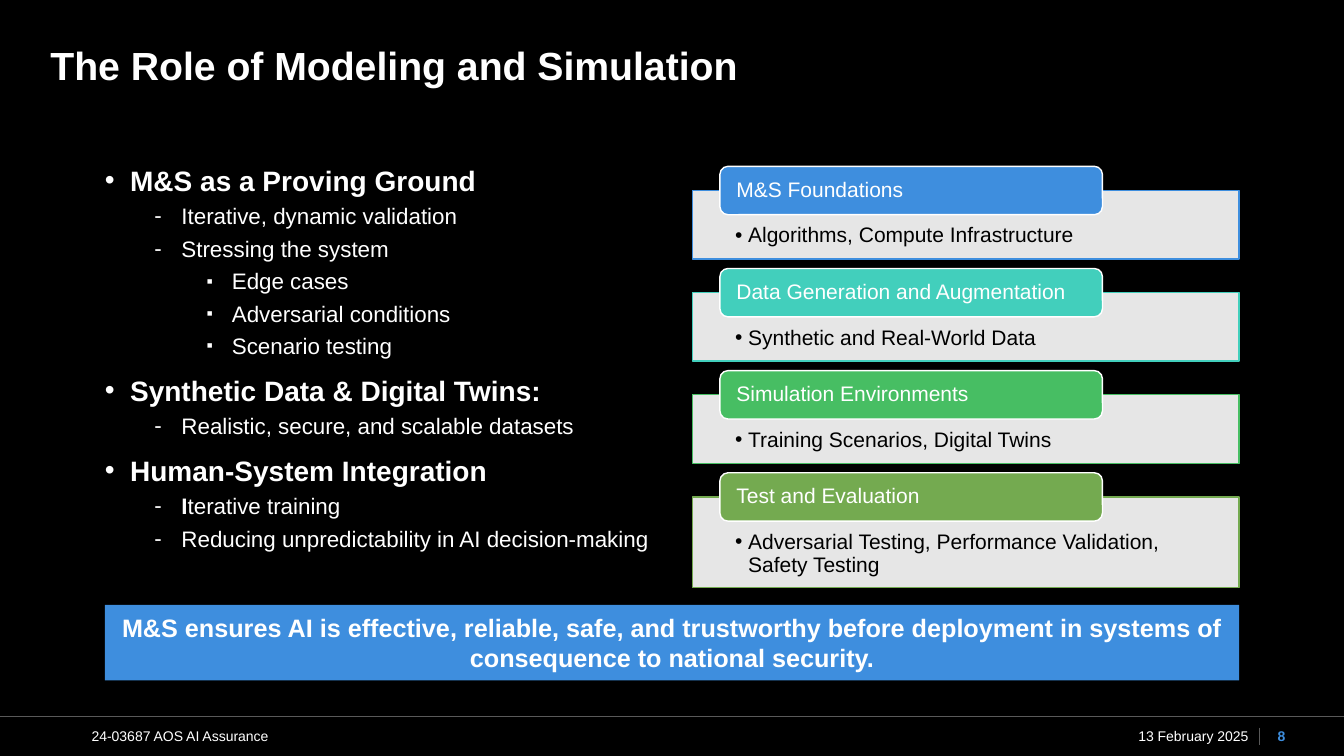
from dataclasses import dataclass

from lxml import etree
from pptx import Presentation
from pptx.dml.color import RGBColor
from pptx.enum.shapes import MSO_CONNECTOR, MSO_SHAPE
from pptx.enum.text import MSO_ANCHOR, PP_ALIGN
from pptx.oxml.ns import qn
from pptx.util import Inches, Pt

RECT, ROUNDED = MSO_SHAPE.RECTANGLE, MSO_SHAPE.ROUNDED_RECTANGLE
STRAIGHT = MSO_CONNECTOR.STRAIGHT
TOP, MIDDLE = MSO_ANCHOR.TOP, MSO_ANCHOR.MIDDLE
LEFT, CENTER, RIGHT = PP_ALIGN.LEFT, PP_ALIGN.CENTER, PP_ALIGN.RIGHT


@dataclass(frozen=True)
class Theme:
    font: str = "Arial"
    black: str = "000000"
    white: str = "FFFFFF"
    rule: str = "595959"
    blue: str = "3E8EDE"
    teal: str = "42CFBC"
    green: str = "47BE63"
    olive: str = "74AA50"
    title: int = 28
    heading: int = 20
    banner: int = 18
    item: int = 16
    panel: int = 15
    footer: int = 10


T = Theme()

# Outline level: bullet, bullet size %, indent, hanging, space before, size
LEVELS = [
    ("•", 100, 0.25, 0.25, 10, T.heading),
    ("-", 100, 0.76, 0.27, 4, T.item),
    ("▪", 80, 1.26, 0.25, 4, T.item),
]
# Outline line: level, bold text, regular text
OUTLINE = [
    (0, "M&S as a Proving Ground", ""),
    (1, "", "Iterative, dynamic validation"),
    (1, "", "Stressing the system"),
    (2, "", "Edge cases"),
    (2, "", "Adversarial conditions"),
    (2, "", "Scenario testing"),
    (0, "Synthetic Data & Digital Twins:", ""),
    (1, "", "Realistic, secure, and scalable datasets"),
    (0, "Human-System Integration", ""),
    (1, "I", "terative training"),
    (1, "", "Reducing unpredictability in AI decision-making"),
]
# Panel: label, detail, colour, height
PANELS = [
    ("M&S Foundations", "Algorithms, Compute Infrastructure", T.blue, 0.68),
    ("Data Generation and Augmentation", "Synthetic and Real-World Data", T.teal, 0.68),
    ("Simulation Environments", "Training Scenarios, Digital Twins", T.green, 0.68),
    ("Test and Evaluation",
     "Adversarial Testing, Performance Validation, Safety Testing", T.olive, 0.9),
]


def rgb(value):
    return RGBColor.from_string(value)


def add_run(p, text, size, color=T.white, bold=False):
    r = p.add_run()
    r.text = text
    r.font.name, r.font.size, r.font.bold = T.font, Pt(size), bold
    r.font.color.rgb = rgb(color)


def add_bullet(p, char, indent, hanging, percent=100):
    pPr = p._p.get_or_add_pPr()
    pPr.set("marL", str(Inches(indent)))
    pPr.set("indent", str(-Inches(hanging)))
    for tag, name, value in [("a:buSzPct", "val", str(percent * 1000)),
                             ("a:buFont", "typeface", T.font),
                             ("a:buChar", "char", char)]:
        etree.SubElement(pPr, qn(tag)).set(name, value)


def set_frame(sp, insets=(0, 0, 0, 0), anchor=TOP, align=LEFT):
    tf = sp.text_frame
    tf.word_wrap = True
    tf.vertical_anchor = anchor
    tf.margin_left, tf.margin_top, tf.margin_right, tf.margin_bottom = map(Inches, insets)
    p = tf.paragraphs[0]
    p.alignment = align
    return tf, p


def add_text(s, box, **frame):
    return set_frame(s.shapes.add_textbox(*map(Inches, box)), **frame)


def add_box(s, kind, box, fill, line=None, **frame):
    sp = s.shapes.add_shape(kind, *map(Inches, box))
    sp.shadow.inherit = False
    sp.fill.solid()
    sp.fill.fore_color.rgb = rgb(fill)
    if line:
        sp.line.color.rgb = rgb(line)
        sp.line.width = Pt(1)
    else:
        sp.line.fill.background()
    return sp, set_frame(sp, **frame)[1]


def add_rule(s, x1, y1, x2, y2):
    line = s.shapes.add_connector(STRAIGHT, *map(Inches, (x1, y1, x2, y2)))
    line.line.color.rgb = rgb(T.rule)
    line.line.width = Pt(0.5)
    etree.SubElement(line._element.spPr, qn("a:effectLst"))


def title(s, box):
    p = add_text(s, box)[1]
    p.line_spacing = 0.9
    add_run(p, "The Role of Modeling and Simulation", T.title, bold=True)


def outline(s, box):
    tf, p = add_text(s, box)
    for i, (level, strong, plain) in enumerate(OUTLINE):
        char, percent, indent, hanging, before, size = LEVELS[level]
        if i:
            p = tf.add_paragraph()
        add_bullet(p, char, indent, hanging, percent)
        p.level = level
        p.space_before = Pt(before if i else 0)
        for text, bold in ((strong, True), (plain, False)):
            if text:
                add_run(p, text, size, bold=bold)


def panel(s, box, label, detail, color):
    x, y, w, h = box
    # Translucent body with one bullet
    sp, p = add_box(s, RECT, box, T.white, color, insets=(0.42, 0.34, 0.42, 0.05))
    fill_color = sp.fill._xPr.find(qn("a:solidFill"))[0]
    etree.SubElement(fill_color, qn("a:alpha")).set("val", "90000")
    add_bullet(p, "•", 0.13, 0.13)
    p.line_spacing = 0.9
    add_run(p, detail, T.panel, T.black)
    # Tab across the top edge
    p = add_box(s, ROUNDED, (x + 0.27, y - 0.24, w * 0.7, 0.48), color, T.white,
                insets=(0.14, 0, 0.14, 0), anchor=MIDDLE)[1]
    p.line_spacing = 0.9
    add_run(p, label, T.panel)


def panels(s, box):
    x, y, w, h = box
    pitch = (h - PANELS[-1][-1]) / (len(PANELS) - 1)
    for i, (label, detail, color, height) in enumerate(PANELS):
        panel(s, (x, y + i * pitch, w, height), label, detail, color)


def banner(s, box):
    p = add_box(s, RECT, box, T.blue, anchor=MIDDLE, align=CENTER)[1]
    add_run(p, "M&S ensures AI is effective, reliable, safe, and trustworthy before "
               "deployment in systems of consequence to national security.",
            T.banner, bold=True)


def footer(s, box):
    x, y, w, h = box
    add_rule(s, x, y, x + w, y)
    add_rule(s, x + 12.49, y + 0.11, x + 12.49, y + 0.28)
    for left, width, text, inset, align, color, bold in [
            (0.81, 3.5, "24-03687 AOS AI Assurance", 0.1, LEFT, T.white, False),
            (10.98, 1.5, "13 February 2025", 0.1, RIGHT, T.white, False),
            (12.51, 0.4, "8", 0, CENTER, T.blue, True)]:
        p = add_text(s, (x + left, y, width, h), insets=(inset, 0, inset, 0),
                     anchor=MIDDLE, align=align)[1]
        add_run(p, text, T.footer, color, bold)


def main():
    prs = Presentation()
    prs.slide_width, prs.slide_height = Inches(13.33), Inches(7.5)
    s = prs.slides.add_slide(prs.slide_layouts[6])
    s.background.fill.solid()
    s.background.fill.fore_color.rgb = rgb(T.black)
    title(s, (0.5, 0.46, 12.33, 0.45))
    outline(s, (1.04, 1.62, 5.42, 4.23))
    panels(s, (6.87, 1.89, 5.42, 3.94))
    banner(s, (1.04, 6, 11.25, 0.75))
    footer(s, (0, 7.11, 13.33, 0.39))
    prs.save("out.pptx")


if __name__ == "__main__":
    main()
